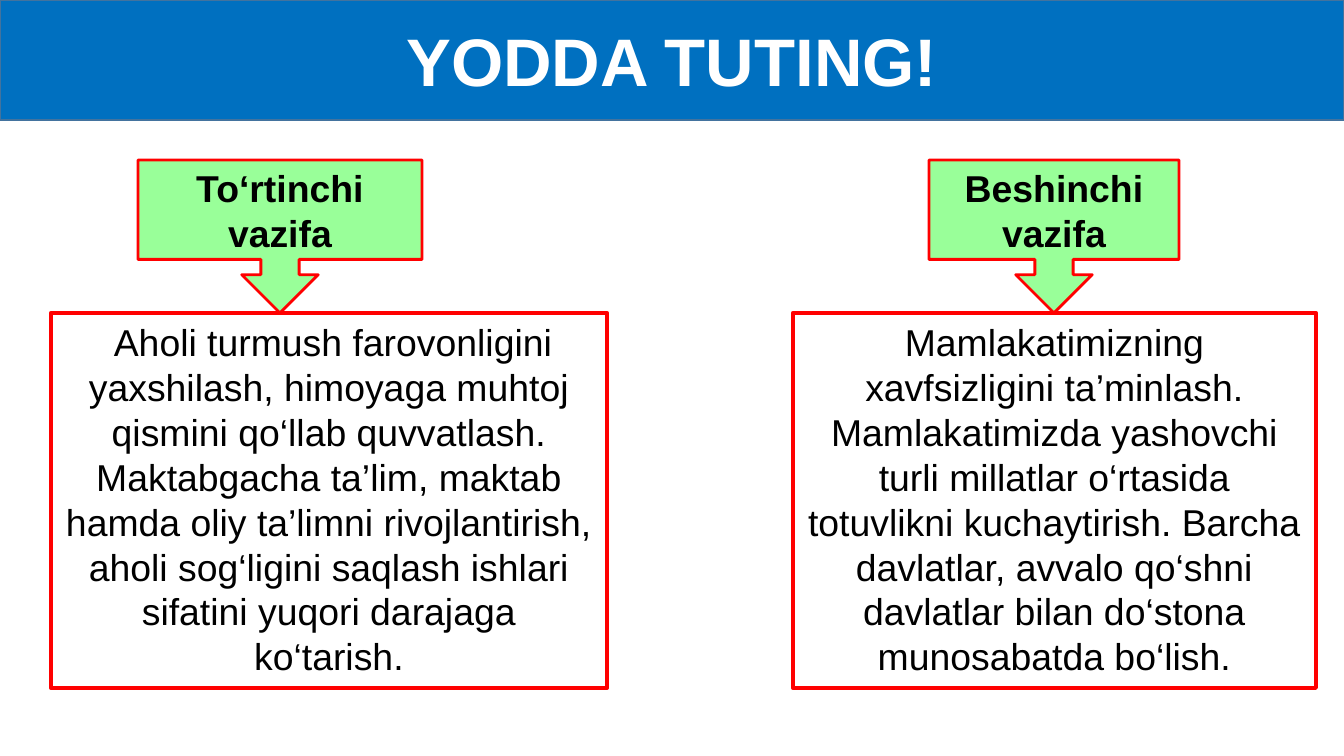
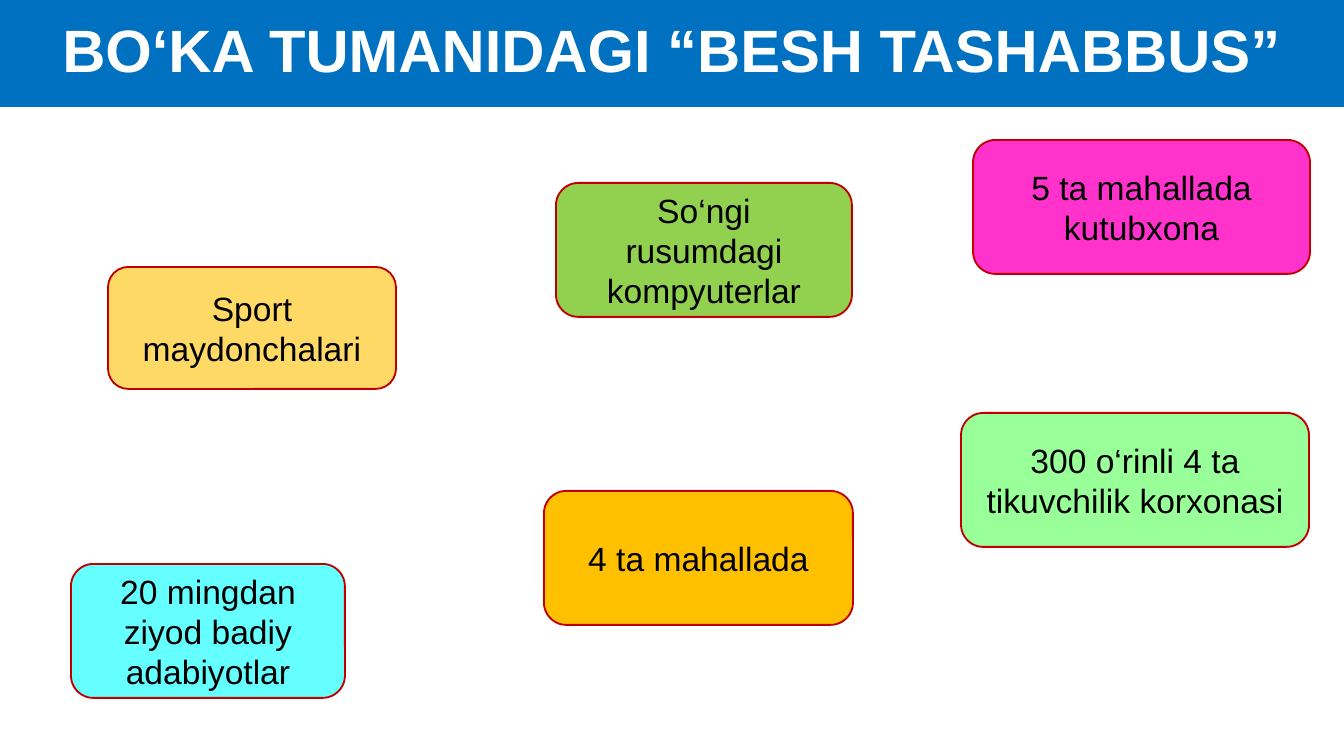
from dataclasses import dataclass

from pptx import Presentation
from pptx.dml.color import RGBColor
from pptx.enum.shapes import MSO_SHAPE
from pptx.enum.text import MSO_ANCHOR, MSO_AUTO_SIZE, PP_ALIGN
from pptx.util import Emu, Pt

EMU_PER_PX = 914400 / 134.4
SLIDE_WIDTH, SLIDE_HEIGHT = 1344, 756
TITLE_ONLY = 5


@dataclass(frozen=True)
class Theme:
    """Colours, font and type sizes shared by the slides."""

    font: str = "Arial"
    band: str = "0070C0"
    band_edge: str = "43739E"
    white: str = "FFFFFF"
    black: str = "000000"
    red: str = "FF0000"
    dark_red: str = "C00000"
    mint: str = "99FF99"
    sand: str = "FFD966"
    green: str = "92D050"
    pink: str = "FF33CC"
    amber: str = "FFC000"
    cyan: str = "66FFFF"
    large_title: int = 36
    title: int = 32
    task: int = 20
    card: int = 18


THEME = Theme()

TASKS = [
    ("To‘rtinchi vazifa", (138, 284),
     " Aholi turmush farovonligini yaxshilash, himoyaga muhtoj qismini qo‘llab "
     "quvvatlash. Maktabgacha ta’lim, maktab hamda oliy ta’limni rivojlantirish, "
     "aholi sog‘ligini saqlash ishlari sifatini yuqori darajaga ko‘tarish.",
     (51, 556)),
    ("Beshinchi vazifa", (929, 250),
     "Mamlakatimizning xavfsizligini ta’minlash. Mamlakatimizda yashovchi turli "
     "millatlar o‘rtasida totuvlikni kuchaytirish. Barcha davlatlar, avvalo "
     "qo‘shni davlatlar bilan do‘stona munosabatda bo‘lish.",
     (793, 523)),
]

CARDS = [
    ("Sport maydonchalari", (108, 267, 288, 122), THEME.sand),
    ("So‘ngi rusumdagi kompyuterlar", (556, 183, 296, 134), THEME.green),
    ("5 ta mahallada kutubxona", (973, 140, 337, 134), THEME.pink),
    ("4 ta mahallada", (544, 491, 309, 134), THEME.amber),
    ("300 o‘rinli 4 ta tikuvchilik korxonasi", (961, 413, 348, 134), THEME.mint),
    ("20 mingdan ziyod badiy adabiyotlar", (71, 564, 274, 134), THEME.cyan),
]


def px(length):
    """Turn a length in px into EMU."""
    return Emu(round(length * EMU_PER_PX))


def apply(target, values):
    """Set each attribute of the target from a dict."""
    for name, value in values.items():
        setattr(target, name, value)


def paint(shape, fill, line, line_width):
    """Fill and outline a shape; None leaves that part empty."""
    for part, colour in ((shape.fill, fill), (shape.line.fill, line)):
        if colour is None:
            part.background()
        else:
            part.solid()
            part.fore_color.rgb = RGBColor.from_string(colour)
    if line is not None:
        shape.line.width = Pt(line_width)


def write(shape, text, size, colour=THEME.black, bold=False, spacing=1.0,
          anchor=MSO_ANCHOR.MIDDLE, auto_size=MSO_AUTO_SIZE.NONE):
    """Put one centred paragraph into a shape."""
    frame = shape.text_frame
    apply(frame, {"word_wrap": True, "vertical_anchor": anchor, "auto_size": auto_size})
    paragraph = frame.paragraphs[0]
    apply(paragraph, {"alignment": PP_ALIGN.CENTER, "line_spacing": spacing})
    run = paragraph.add_run()
    run.text = text
    apply(run.font, {"name": THEME.font, "size": Pt(size), "bold": bold})
    run.font.color.rgb = RGBColor.from_string(colour)


def add_titled_slide(presentation, text, height, size, edge=None, spacing=1.0):
    """Add a slide whose title is a full-width band."""
    slide = presentation.slides.add_slide(presentation.slide_layouts[TITLE_ONLY])
    title = slide.shapes.title
    apply(title, {"left": px(0), "top": px(0),
                  "width": px(SLIDE_WIDTH), "height": px(height)})
    paint(title, THEME.band, edge, 1)
    write(title, text, size, THEME.white, bold=True, spacing=spacing)
    return slide


def add_box(slide, kind, bounds, fill, line, line_width, text, size, **text_format):
    """Add a preset shape holding centred text."""
    shape = slide.shapes.add_shape(kind, *map(px, bounds))
    shape.shadow.inherit = False
    paint(shape, fill, line, line_width)
    write(shape, text, size, **text_format)


def add_task(slide, heading, heading_span, text, text_span):
    """Add a callout heading pointing down at its description."""
    callout_top, callout_height, text_height = 160, 153, 375
    left, width = heading_span
    add_box(slide, MSO_SHAPE.DOWN_ARROW_CALLOUT,
            (left, callout_top, width, callout_height),
            THEME.mint, THEME.red, 1.5, heading, THEME.task, bold=True)
    left, width = text_span
    add_box(slide, MSO_SHAPE.RECTANGLE,
            (left, callout_top + callout_height, width, text_height),
            None, THEME.red, 2.25, text, THEME.task,
            anchor=MSO_ANCHOR.TOP, auto_size=MSO_AUTO_SIZE.SHAPE_TO_FIT_TEXT)


def add_card(slide, text, bounds, fill):
    """Add a coloured rounded card."""
    add_box(slide, MSO_SHAPE.ROUNDED_RECTANGLE, bounds, fill,
            THEME.dark_red, 1, text, THEME.card)


def main():
    """Build and save both slides."""
    presentation = Presentation()
    apply(presentation, {"slide_width": px(SLIDE_WIDTH), "slide_height": px(SLIDE_HEIGHT)})

    slide = add_titled_slide(presentation, "YODDA TUTING!", 120,
                             THEME.large_title, THEME.band_edge)
    for task in TASKS:
        add_task(slide, *task)

    slide = add_titled_slide(presentation, "BO‘KA TUMANIDAGI “BESH TASHABBUS”", 107,
                             THEME.title, spacing=0.9)
    for card in CARDS:
        add_card(slide, *card)

    presentation.save("out.pptx")


if __name__ == "__main__":
    main()
